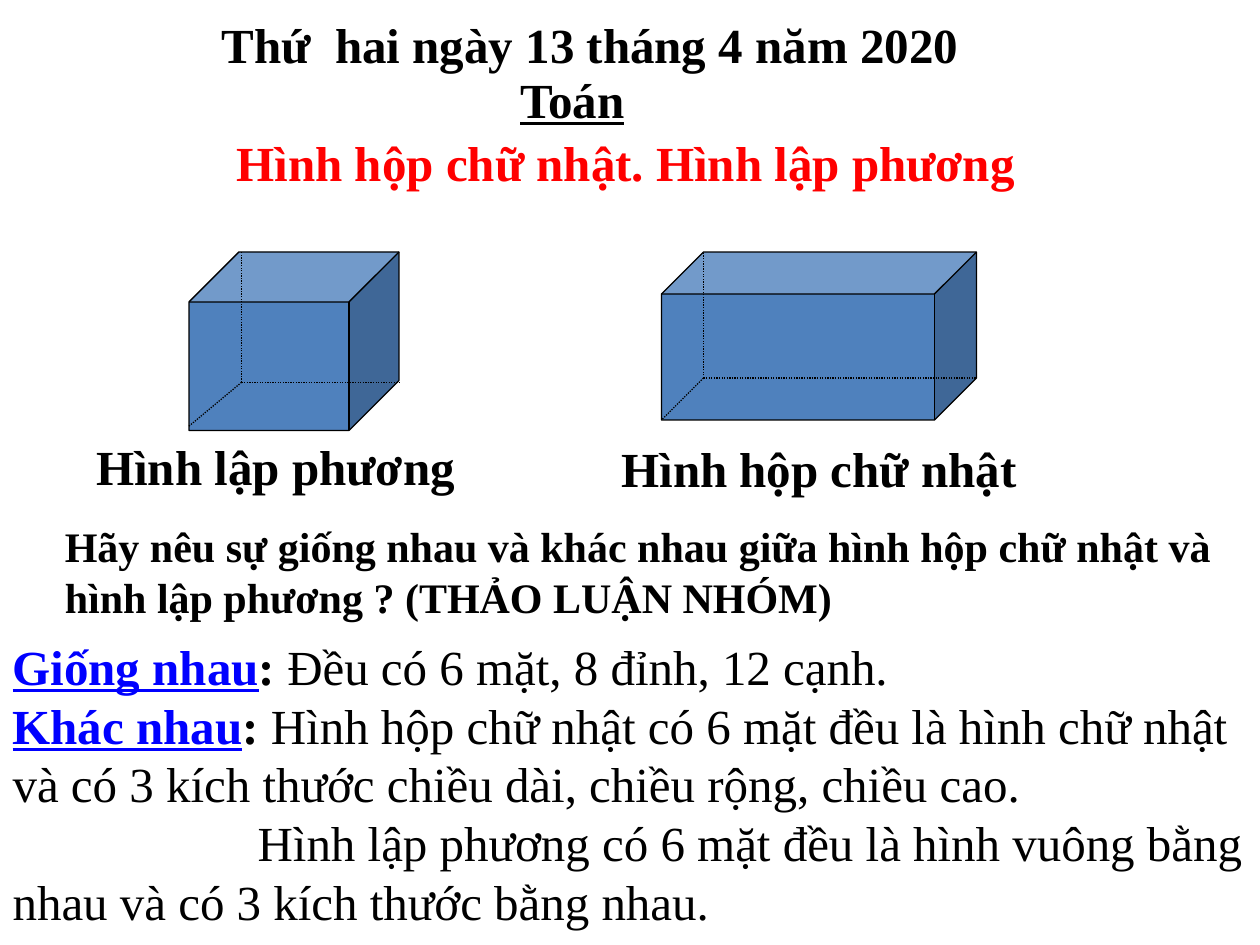
from lxml.etree import SubElement
from pptx import Presentation
from pptx.dml.color import RGBColor
from pptx.enum.dml import MSO_LINE
from pptx.enum.shapes import MSO_CONNECTOR, MSO_SHAPE
from pptx.enum.text import MSO_ANCHOR, MSO_AUTO_SIZE, PP_ALIGN
from pptx.oxml.ns import qn
from pptx.util import Pt

COLORS = {"text": "000000", "topic": "FF0000", "label": "0000FF",
          "solid": "4F81BD", "edge": "000000"}
FONT = "Times New Roman"


def color(name):
    return RGBColor.from_string(COLORS[name])


def place(shape, box):
    shape.left, shape.top, shape.width, shape.height = map(Pt, box)


def prepare_frame(shape):
    frame = shape.text_frame
    frame.word_wrap = True
    frame.auto_size = MSO_AUTO_SIZE.SHAPE_TO_FIT_TEXT
    frame.vertical_anchor = MSO_ANCHOR.TOP
    return frame


def style_font(font, size=28, bold=True, underline=False, tint="text"):
    font.name, font.size = FONT, Pt(size)
    font.bold, font.underline = bold, underline
    font.color.rgb = color(tint)


def write_line(shape, text, align=PP_ALIGN.LEFT, **style):
    paragraph = prepare_frame(shape).paragraphs[0]
    paragraph.text = text
    paragraph.alignment = align
    style_font(paragraph.font, **style)


def add_text(slide, box, text, **style):
    write_line(slide.shapes.add_textbox(*map(Pt, box)), text, **style)


def add_heading(slide):
    """Date, subject and lesson topic."""
    add_text(slide, (68, 5, 538, 41), "Thứ  hai ngày 13 tháng 4 năm 2020",
             align=PP_ALIGN.CENTER)
    add_text(slide, (282, 36, 90, 41), "Toán", align=PP_ALIGN.CENTER, underline=True)
    place(slide.shapes.title, (128, 72, 484, 41))
    write_line(slide.shapes.title, "Hình hộp chữ nhật. Hình lập phương", tint="topic")


def add_solid(slide, box, depth, hidden_corner, foot):
    """Box with dotted hidden edges; corner and foot are offsets from its top left."""
    left, top, width, height = box
    group = slide.shapes.add_group_shape()
    solid = group.shapes.add_shape(MSO_SHAPE.CUBE, *map(Pt, box))
    solid.adjustments[0] = depth
    solid.shadow.inherit = False
    solid.fill.solid()
    solid.fill.fore_color.rgb = color("solid")
    solid.line.color.rgb = color("edge")
    solid.line.width = Pt(0.75)

    corner_x, corner_y = left + hidden_corner[0], top + hidden_corner[1]
    for end in ((left + width, corner_y), (corner_x, top), (left, top + foot)):
        edge = group.shapes.add_connector(
            MSO_CONNECTOR.STRAIGHT, *map(Pt, (corner_x, corner_y, *end)))
        edge.line.color.rgb = color("edge")
        edge.line.width = Pt(0.75)
        edge.line.dash_style = MSO_LINE.ROUND_DOT
        SubElement(edge._element.spPr, qn("a:effectLst"))


def add_answers(body, box):
    """Similarities and differences, with coloured lead words."""
    place(body, box)
    frame = prepare_frame(body)
    frame.margin_right = 0
    answers = [
        ("Giống nhau", "Đều có 6 mặt, 8 đỉnh, 12 cạnh.", 0),
        ("Khác nhau", "Hình hộp chữ nhật có 6 mặt đều là hình chữ nhật "
         "và có 3 kích thước chiều dài, chiều rộng, chiều cao.", 0),
        (None, "Hình lập phương có 6 mặt đều là hình vuông bằng nhau "
         "và có 3 kích thước bằng nhau.", 140),
    ]
    for index, (label, answer, indent) in enumerate(answers):
        paragraph = frame.paragraphs[0] if index == 0 else frame.add_paragraph()
        paragraph.space_before = Pt(0)
        properties = paragraph._p.get_or_add_pPr()
        properties.set("marL", "0")
        properties.set("indent", str(Pt(indent)))
        SubElement(properties, qn("a:buNone"))
        runs = [(answer, {"bold": False})]
        if label:
            runs = [(label, {"underline": True, "tint": "label"}), (": ", {})] + runs
        for text, style in runs:
            run = paragraph.add_run()
            run.text = text
            style_font(run.font, **style)


def main():
    presentation = Presentation()
    presentation.slide_width, presentation.slide_height = Pt(720), Pt(540)
    slide = presentation.slides.add_slide(presentation.slide_layouts[1])

    add_heading(slide)

    # The two solids and their names
    add_solid(slide, (108, 144, 120, 102), 0.28, (30, 74.5), 99.5)
    add_solid(slide, (378, 144, 180, 96), 0.25, (24, 72), 96)
    add_text(slide, (48, 246, 258, 41), "Hình lập phương")
    add_text(slide, (348, 247, 276, 41), "Hình hộp chữ nhật")

    # Discussion question and its answers
    add_text(slide, (30, 294, 678, 65.5),
             "Hãy nêu sự giống nhau và khác nhau giữa hình hộp chữ nhật và "
             "hình lập phương ? (THẢO LUẬN NHÓM)", size=24)
    add_answers(slide.placeholders[1], (0, 360, 720, 177))

    presentation.save("out.pptx")


if __name__ == "__main__":
    main()
